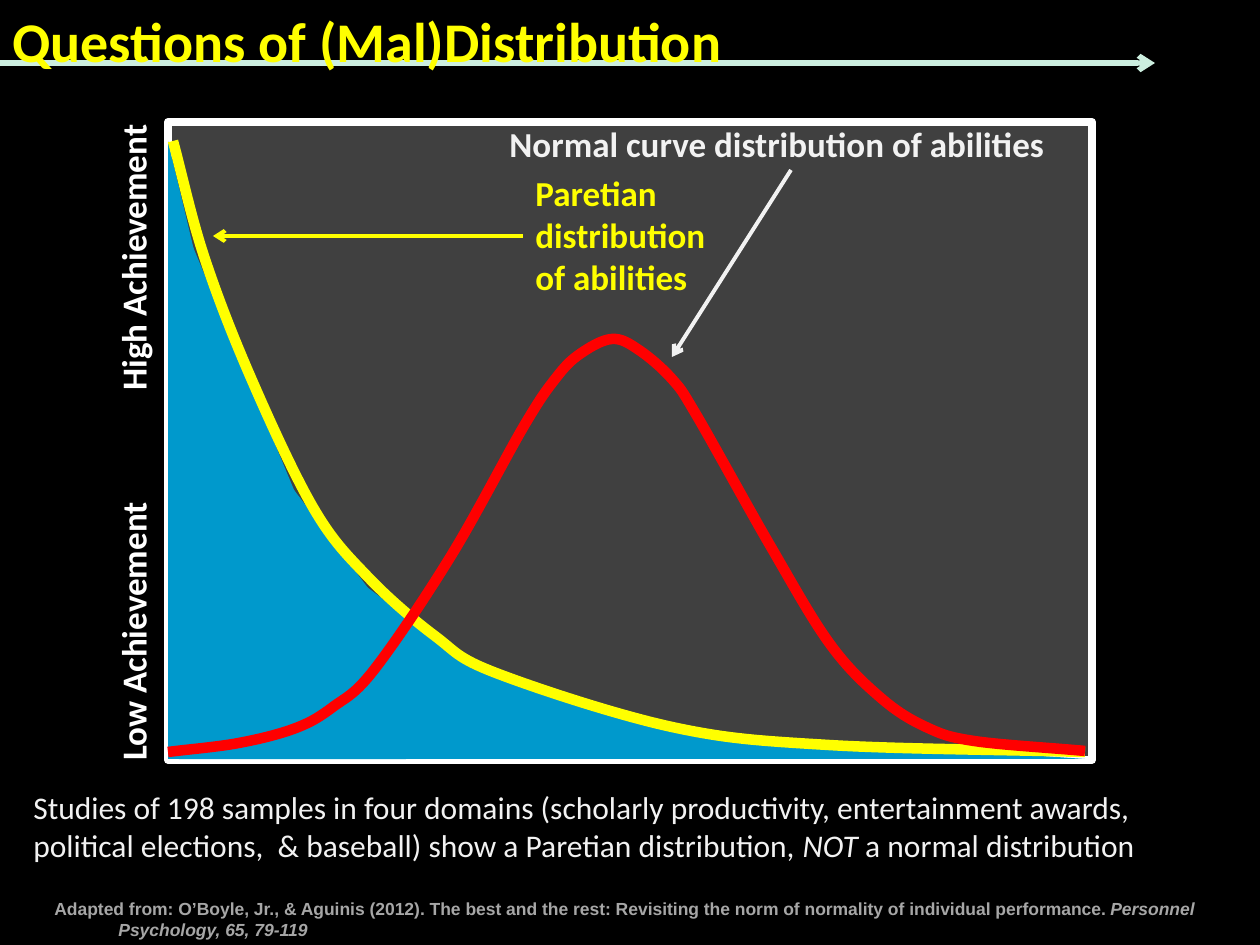
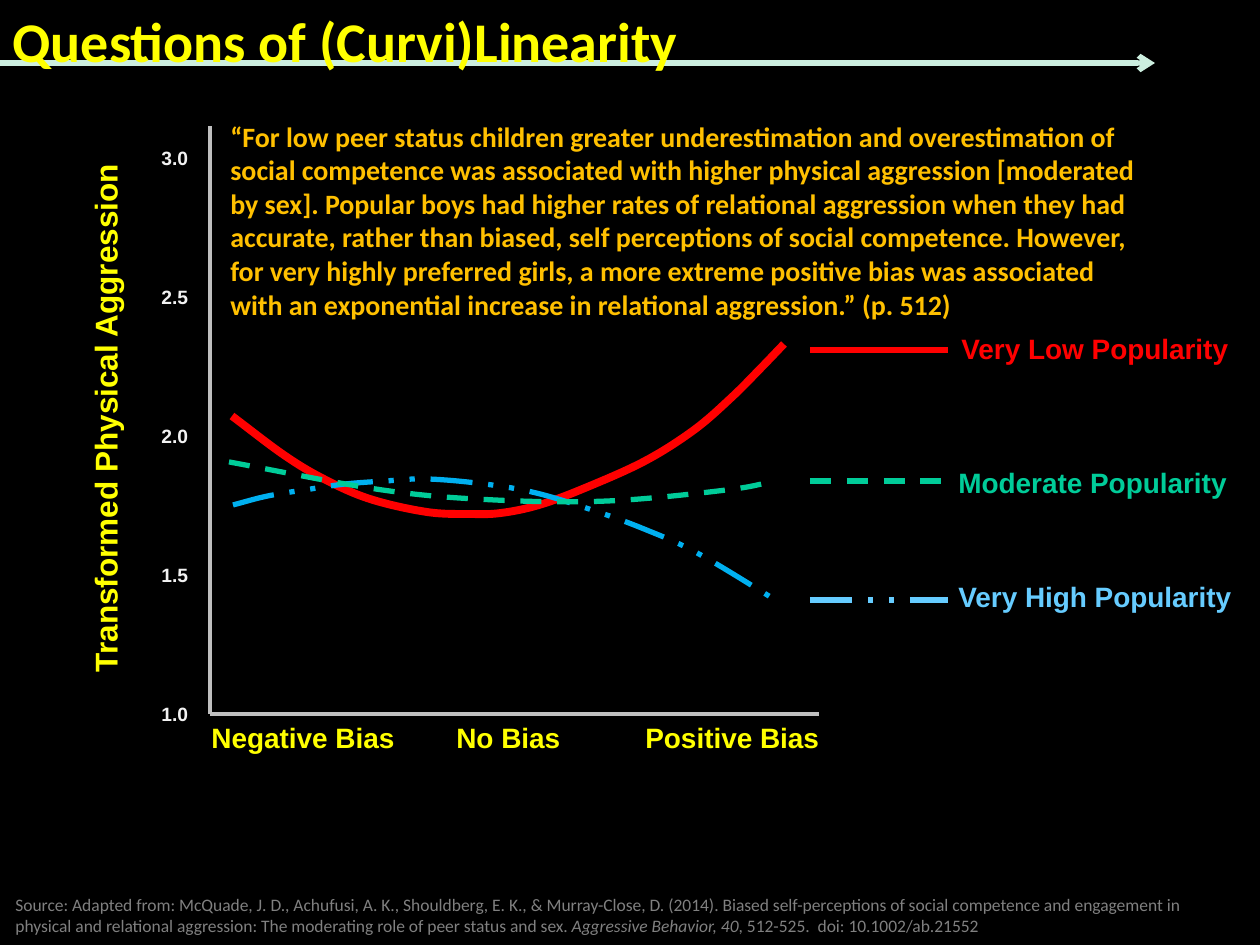
"""Build two dark slides on the distribution and linearity of abilities."""
from lxml.etree import SubElement
from pptx import Presentation
from pptx.dml.color import RGBColor
from pptx.enum.dml import MSO_LINE
from pptx.enum.shapes import MSO_CONNECTOR, MSO_SHAPE
from pptx.enum.text import MSO_ANCHOR, PP_ALIGN
from pptx.oxml.ns import qn
from pptx.util import Pt

EMU_PER_PX = 914400 / 126
SLIDE_SIZE = (1260, 945)
BLACK, WHITE, PALE, YELLOW, RED = "000000", "FFFFFF", "F2F2F2", "FFFF00", "FF0000"
MINT, GREEN, SKY, BLUE, GOLD = "CCEEDF", "00CC99", "66CCFF", "00B0F0", "FFC000"
PANEL, AREA, AXIS = "404040", "0099CC", "BFBFBF"
HEADER_ARROW = ((0, 63), (1155, 63))

STUDIES = ("Studies of 198 samples in four domains (scholarly productivity, entertainment "
           "awards,  political elections,  & baseball) show a Paretian distribution, "
           "*NOT *a normal distribution")
ABILITY_SOURCE = ("Adapted from: O’Boyle, Jr., & Aguinis (2012). The best and the rest: "
                  "Revisiting the norm of normality of individual performance. "
                  "*Personnel Psychology, 65, 79-119*")
QUOTE = ("“For low peer status children greater underestimation and overestimation of social "
         "competence was associated with higher physical aggression [moderated by sex]. "
         "Popular boys had higher rates of relational aggression when they had accurate, "
         "rather than biased, self perceptions of social competence. However, for very highly "
         "preferred girls, a more extreme positive bias was associated with an exponential "
         "increase in relational aggression.” (p. 512)")
AGGRESSION_SOURCE = ("Source: Adapted from: McQuade, J. D., Achufusi, A. K., Shouldberg, E. K., "
                     "& Murray-Close, D. (2014). Biased self-perceptions of social competence "
                     "and engagement in physical and relational aggression: The moderating role "
                     "of peer status and sex. *Aggressive Behavior, 40*, 512-525.  "
                     "doi: 10.1002/ab.21552")

PLOT = (168, 122, 924, 638)
AREA_BASE = 759
AREA_WEDGES = [
    (168, 141, 147, 0), (179, 213, 227, 0), (202, 368, 295, 0),
    (270, 525, 329, 0.04), (394, 643, 352, 0.04), (417, 714, 668, 0.04),
]
PARETIAN_CURVE = [
    (173, 141), (204, 256), (251, 378), (314, 509), (368, 577),
    (435, 636), (496, 673), (672, 727), (828, 745), (1085, 752),
]
NORMAL_CURVE = [
    (168, 752), (239, 743), (296, 728), (333, 707), (374, 670), (451, 556), (524, 426),
    (556, 378), (580, 354), (612, 339), (639, 350), (672, 379), (697, 416), (771, 547),
    (830, 644), (881, 698), (926, 727), (974, 741), (1085, 751),
]
ACHIEVEMENT_LEVELS = [("Low Achievement", 632), ("High Achievement", 258)]

ORIGIN, Y_AXIS_TOP, X_AXIS_END = (210, 714), (210, 126), (819, 714)
SCORES = ["3.0", "2.5", "2.0", "1.5", "1.0"]
FIRST_SCORE_Y, SCORE_STEP = 158, 139
BIASES = [("Negative Bias", 199), ("No Bias", 444), ("Positive Bias", 633)]
POPULARITY_CURVES = [
    (RED, 4.5, MSO_LINE.SOLID, [
        (232, 416), (284, 455), (324, 479), (370, 499), (427, 512), (470, 514), (501, 513),
        (539, 505), (585, 488), (645, 461), (694, 430), (731, 398), (760, 369), (784, 344)]),
    (BLUE, 3, MSO_LINE.DASH_DOT_DOT, [
        (233, 505), (268, 496), (311, 489), (346, 484), (386, 481), (427, 479),
        (484, 484), (536, 493), (592, 510), (644, 529), (699, 554), (782, 604)]),
    (GREEN, 3, MSO_LINE.DASH, [
        (229, 462), (382, 490), (494, 500), (609, 501), (727, 490), (776, 481)]),
]
LEGEND = [
    ("Very Low Popularity", RED, MSO_LINE.SOLID, 350, (949, 325, 296, 47)),
    ("Moderate Popularity", GREEN, MSO_LINE.DASH, 481, (946, 459, 297, 47)),
    ("Very High Popularity", SKY, MSO_LINE.DASH_DOT_DOT, 600, (946, 573, 302, 47)),
]


def px(length):
    return round(length * EMU_PER_PX)


def rgb(color):
    return RGBColor.from_string(color)


def add_text(slide, box, text, size, color, font="Calibri", bold=True, wrap=True,
             align=PP_ALIGN.LEFT, anchor=MSO_ANCHOR.TOP, rotation=0, hanging=0):
    """Write lines of text, with the parts between asterisks in italics."""
    label = slide.shapes.add_textbox(*map(px, box))
    label.rotation = rotation
    frame = label.text_frame
    frame.word_wrap = wrap
    frame.vertical_anchor = anchor
    for number, words in enumerate(text.split("\n")):
        paragraph = frame.add_paragraph() if number else frame.paragraphs[0]
        paragraph.alignment = align
        if hanging:
            properties = paragraph._p.get_or_add_pPr()
            properties.set("marL", str(px(hanging)))
            properties.set("indent", str(-px(hanging)))
        for part, piece in enumerate(words.split("*")):
            if piece:
                run = paragraph.add_run()
                run.text = piece
                run.font.name, run.font.size = font, Pt(size)
                run.font.bold, run.font.italic = bold, part % 2 == 1
                run.font.color.rgb = rgb(color)


def style_line(line, color, width, dash=MSO_LINE.SOLID):
    line.color.rgb = rgb(color)
    line.width = Pt(width)
    line.dash_style = dash


def add_line(slide, start, end, color, width, dash=MSO_LINE.SOLID, arrow=False):
    connector = slide.shapes.add_connector(MSO_CONNECTOR.STRAIGHT, *map(px, start + end))
    style_line(connector.line, color, width, dash)
    if arrow:
        SubElement(connector.line._get_or_add_ln(), qn("a:tailEnd"), type="arrow")
    SubElement(connector._element.spPr, qn("a:effectLst"))


def add_filled(slide, preset, box, fill):
    shape = slide.shapes.add_shape(preset, *map(px, box))
    shape.shadow.inherit = False
    shape.fill.solid()
    shape.fill.fore_color.rgb = rgb(fill)
    shape.line.fill.background()
    return shape


def bezier_points(knots):
    """Return two handles and an end point for each span of a smooth curve."""
    def mirrored(end, inner):
        return tuple(2 * a - b for a, b in zip(end, inner))

    padded = [mirrored(knots[0], knots[1]), *knots, mirrored(knots[-1], knots[-2])]
    points = []
    for before, start, end, after in zip(padded, padded[1:], padded[2:], padded[3:]):
        points += [
            tuple(s + (e - b) / 6 for b, s, e in zip(before, start, end)),
            tuple(e - (a - s) / 6 for s, e, a in zip(start, end, after)),
            end,
        ]
    return points


def add_curve(slide, knots, color, width, dash=MSO_LINE.SOLID):
    builder = slide.shapes.build_freeform(*map(px, knots[0]))
    builder.add_line_segments([tuple(map(px, p)) for p in bezier_points(knots)], close=False)
    curve = builder.convert_to_shape()
    curve.shadow.inherit = False
    curve.fill.background()
    style_line(curve.line, color, width, dash)
    outline = next(curve._element.iter(qn("a:path")))
    segments = outline.findall(qn("a:lnTo"))
    for first in range(0, len(segments), 3):
        span = SubElement(outline, qn("a:cubicBezTo"))
        for segment in segments[first:first + 3]:
            span.append(segment[0])
            outline.remove(segment)


def start_slide(deck):
    slide = deck.slides.add_slide(deck.slide_layouts[6])
    slide.background.fill.solid()
    slide.background.fill.fore_color.rgb = rgb(BLACK)
    return slide


def add_header(slide, title, width):
    add_line(slide, *HEADER_ARROW, MINT, 3, arrow=True)
    add_text(slide, (0, 0, width, 81), title, 32, YELLOW, wrap=False)


def build_distribution(deck):
    slide = start_slide(deck)
    add_text(slide, (21, 782, 1166, 89), STUDIES, 18, PALE, bold=False)
    plot = add_filled(slide, MSO_SHAPE.RECTANGLE, PLOT, PANEL)
    style_line(plot.line, WHITE, 4.5)
    add_line(slide, (791, 170), (672, 357), PALE, 2.25, arrow=True)
    add_text(slide, (42, 892, 1166, 55), ABILITY_SOURCE, 10, "A6A6A6", font="Arial", hanging=64)
    add_line(slide, (523, 236), (213, 236), YELLOW, 2.25, arrow=True)
    for left, top, width, apex in AREA_WEDGES:
        wedge = add_filled(slide, MSO_SHAPE.ISOSCELES_TRIANGLE,
                           (left, top, width, AREA_BASE - top), AREA)
        wedge.adjustments[0] = apex
    add_curve(slide, PARETIAN_CURVE, YELLOW, 6)
    add_text(slide, (523, 165, 212, 140), "Paretian\ndistribution\nof abilities", 20, YELLOW)
    add_text(slide, (497, 116, 588, 55), "Normal curve distribution of abilities", 20, PALE)
    add_curve(slide, NORMAL_CURVE, RED, 6)
    for level, middle in ACHIEVEMENT_LEVELS:
        add_text(slide, (-17, middle - 28, 300, 55), level, 20, WHITE,
                 align=PP_ALIGN.CENTER, rotation=270)
    add_header(slide, "Questions of (Mal)Distribution", 742)


def build_linearity(deck):
    slide = start_slide(deck)
    for bias, left in BIASES:
        add_text(slide, (left, 714, 210, 47), bias, 16, YELLOW, font="Arial")
    add_text(slide, (3, 888, 1228, 55), AGGRESSION_SOURCE, 10, "808080", bold=False)
    for axis_end in (Y_AXIS_TOP, X_AXIS_END):
        add_line(slide, ORIGIN, axis_end, AXIS, 2.25)
    add_text(slide, (-164, 393, 538, 50), "Transformed Physical Aggression", 18, YELLOW,
             font="Arial", wrap=False, align=PP_ALIGN.CENTER, rotation=270)
    for row, score in enumerate(SCORES):
        add_text(slide, (149, FIRST_SCORE_Y + row * SCORE_STEP - 18, 53, 36), score, 11, PALE,
                 font="Arial", wrap=False, anchor=MSO_ANCHOR.MIDDLE)
    add_text(slide, (218, 113, 945, 217), QUOTE, 16, GOLD)
    for color, width, dash, knots in POPULARITY_CURVES:
        add_curve(slide, knots, color, width, dash)
    for popularity, color, dash, line_y, box in LEGEND:
        add_line(slide, (810, line_y), (948, line_y), color, 3, dash)
        add_text(slide, box, popularity, 16, color, font="Arial", wrap=False)
    add_header(slide, "Questions of (Curvi)Linearity", 698)


def main():
    deck = Presentation()
    deck.slide_width, deck.slide_height = map(px, SLIDE_SIZE)
    build_distribution(deck)
    build_linearity(deck)
    deck.save("out.pptx")


if __name__ == "__main__":
    main()
